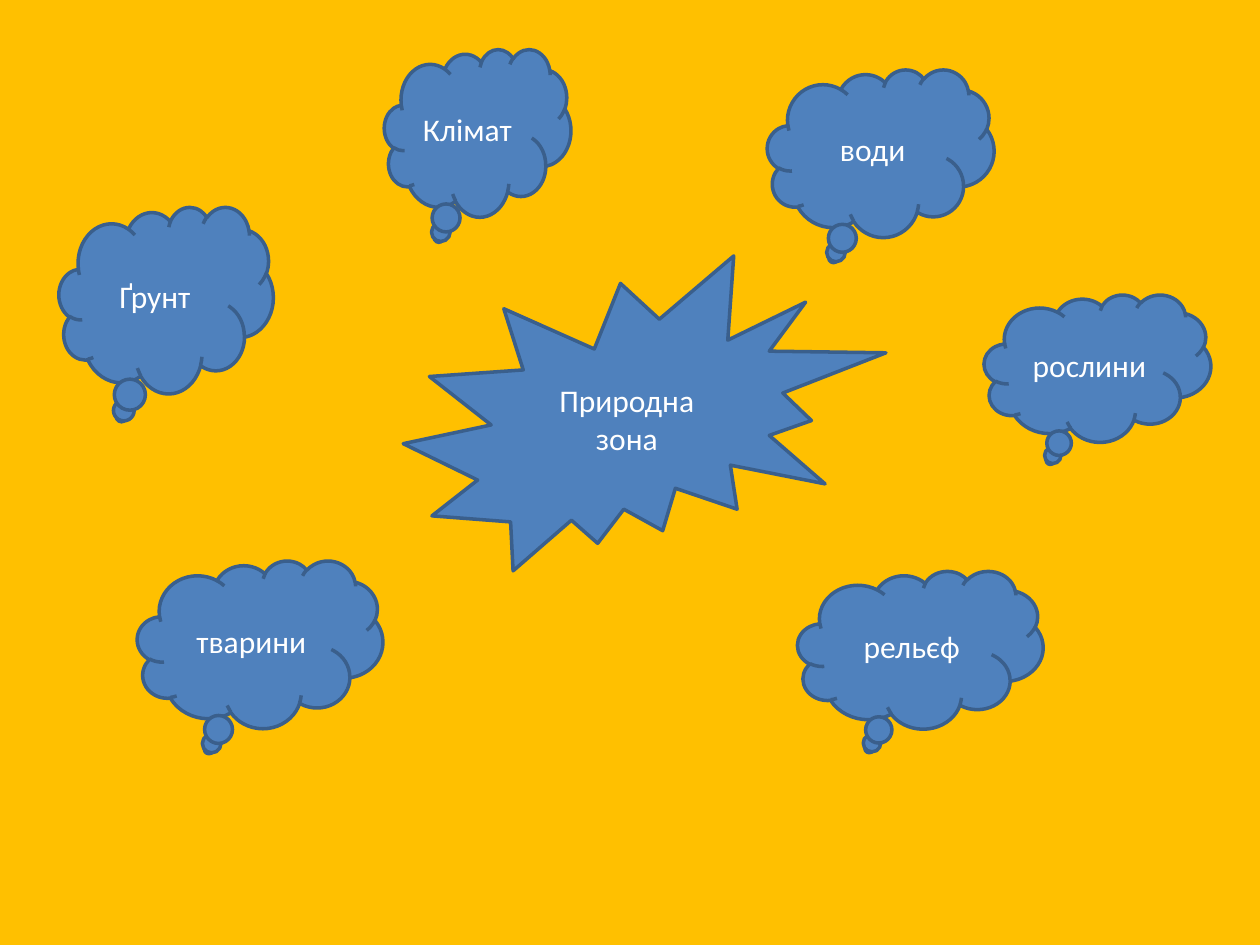
from dataclasses import dataclass

from pptx import Presentation
from pptx.dml.color import RGBColor
from pptx.enum.shapes import MSO_SHAPE
from pptx.enum.text import MSO_ANCHOR, PP_ALIGN
from pptx.slide import Slide
from pptx.util import Cm, Pt

CLOUD = MSO_SHAPE.CLOUD_CALLOUT
BURST = MSO_SHAPE.EXPLOSION2
MIDDLE = MSO_ANCHOR.MIDDLE
CENTER = PP_ALIGN.CENTER

AMBER = RGBColor(0xFF, 0xC0, 0x00)
BLUE = RGBColor(0x4F, 0x81, 0xBD)
DARK_BLUE = RGBColor(0x3A, 0x5F, 0x8C)
WHITE = RGBColor(0xFF, 0xFF, 0xFF)


@dataclass(frozen=True)
class Bubble:
    text: str
    left: float
    top: float
    width: float
    height: float
    outline: MSO_SHAPE = CLOUD


BUBBLES = [
    Bubble("Ґрунт ", 1.19, 4.17, 4.32, 3.76),
    Bubble("Клімат ", 7.75, 0.99, 3.76, 3.38),
    Bubble("води", 15.47, 1.4, 4.57, 3.38),
    Bubble("рослини", 19.84, 5.94, 4.57, 2.97),
    Bubble("тварини", 2.77, 11.3, 4.95, 3.38),
    Bubble("рельєф", 16.08, 11.51, 4.95, 3.18),
    Bubble("Природна зона", 8.13, 5.16, 9.73, 6.35, BURST),
]


def draw_bubble(page: Slide, bubble: Bubble) -> None:
    shape = page.shapes.add_shape(
        bubble.outline,
        Cm(bubble.left),
        Cm(bubble.top),
        Cm(bubble.width),
        Cm(bubble.height),
    )
    shape.shadow.inherit = False
    shape.fill.solid()
    shape.fill.fore_color.rgb = BLUE
    shape.line.color.rgb = DARK_BLUE
    shape.line.width = Pt(2)

    frame = shape.text_frame
    frame.text = bubble.text
    frame.word_wrap = True
    frame.vertical_anchor = MIDDLE
    para = frame.paragraphs[0]
    para.alignment = CENTER
    font = para.runs[0].font
    font.name = "Calibri"
    font.size = Pt(18)
    font.color.rgb = WHITE


def main() -> None:
    deck = Presentation()
    deck.slide_width = Cm(25.4)
    deck.slide_height = Cm(19.05)
    page = deck.slides.add_slide(deck.slide_layouts[6])
    page.background.fill.solid()
    page.background.fill.fore_color.rgb = AMBER
    for bubble in BUBBLES:
        draw_bubble(page, bubble)
    deck.save("out.pptx")


if __name__ == "__main__":
    main()
